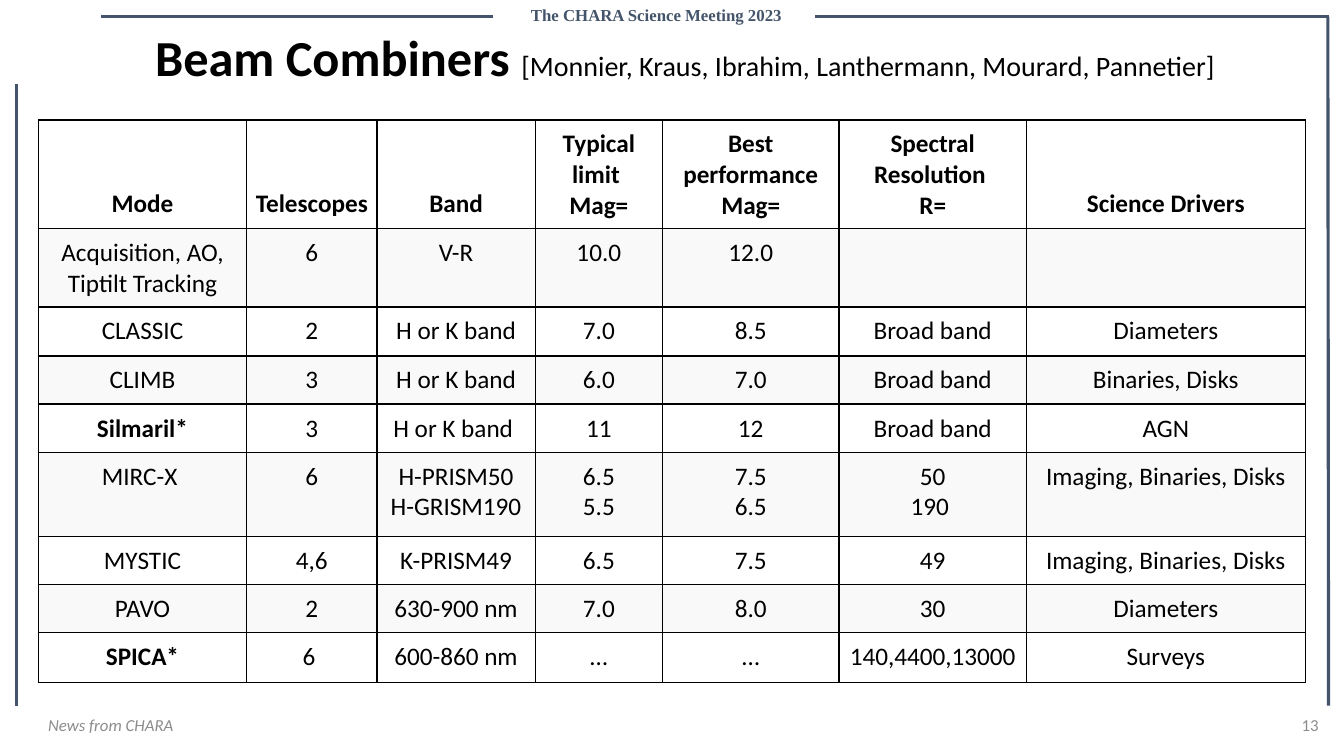
"""Build the beam combiner overview slide as out.pptx."""
from dataclasses import dataclass

from lxml.etree import SubElement
from pptx import Presentation
from pptx.dml.color import RGBColor
from pptx.enum.shapes import MSO_CONNECTOR
from pptx.enum.text import MSO_ANCHOR, PP_ALIGN
from pptx.oxml import parse_xml
from pptx.oxml.ns import nsdecls, qn
from pptx.util import Pt


@dataclass(frozen=True)
class Theme:
    ink: str = "000000"
    slate: str = "44546A"
    grey: str = "8C8C8C"
    band: str = "F9F9F9"
    white: str = "FFFFFF"
    body_font: str = "Calibri"
    meeting_font: str = "Times New Roman"
    title_size: int = 36
    authors_size: int = 20
    table_size: int = 18
    small_size: int = 12
    rule_width: float = 2.25
    border_width: float = 1


THEME = Theme()

MEETING = "The CHARA Science Meeting 2023"
TITLE = "Beam Combiners "
AUTHORS = "[Monnier, Kraus, Ibrahim, Lanthermann, Mourard, Pannetier]"
FOOTER = "News from CHARA"
PAGE = "13"

HEADINGS = ("Mode", "Telescopes", "Band", "Typical limit \vMag=",
            "Best performance Mag=", "Spectral Resolution \vR=", "Science Drivers")
COMBINERS = [
    ("Acquisition, AO, Tiptilt Tracking", "6", "V-R", "10.0", "12.0", "", ""),
    ("CLASSIC", "2", "H or K band", "7.0", "8.5", "Broad band", "Diameters"),
    ("CLIMB", "3", "H or K band", "6.0", "7.0", "Broad band", "Binaries, Disks"),
    ("Silmaril*", "3", "H or K band ", "11", "12", "Broad band", "AGN"),
    ("MIRC-X ", "6", "H-PRISM50\nH-GRISM190", "6.5\n5.5", "7.5\n6.5", "50\n190 ",
     "Imaging, Binaries, Disks"),
    ("MYSTIC", "4,6", "K-PRISM49", "6.5", "7.5", "49", "Imaging, Binaries, Disks"),
    ("PAVO", "2", "630-900 nm", "7.0", "8.0", "30", "Diameters"),
    ("SPICA*", "6 ", "600-860 nm", "…", "…", "140,4400,13000", "Surveys"),
]

SLIDE_SIZE = (960, 540)
TABLE_ORIGIN = (27.3, 85.7)
COLUMN_WIDTHS = (149, 93, 113, 91, 126, 134, 199)
ROW_HEIGHTS = (71.5, 53.5, 35, 32.5, 33, 60, 32.5, 33, 36)
CELL_INSET = 6.4
FRAME_RULES = [
    ((12, 60), (12, 504)),
    ((582.5, 12), (949, 12)),
    ((948.5, 12), (949, 504)),
    ((72, 12), (352, 12)),
]


def style_font(font, size=None, color=THEME.ink, name=THEME.body_font, bold=None, italic=None):
    font.name = name
    font.color.rgb = RGBColor.from_string(color)
    font.bold = bold
    font.italic = italic
    if size:
        font.size = Pt(size)


def add_label(slide, box, text, align=PP_ALIGN.LEFT, anchor=MSO_ANCHOR.TOP, wrap=True, **font):
    frame = slide.shapes.add_textbox(*map(Pt, box)).text_frame
    frame.word_wrap = wrap
    frame.vertical_anchor = anchor
    paragraph = frame.paragraphs[0]
    paragraph.text = text
    paragraph.alignment = align
    style_font(paragraph.font, **font)
    return paragraph


def add_rule(slide, start, end):
    rule = slide.shapes.add_connector(MSO_CONNECTOR.STRAIGHT, *map(Pt, start + end))
    rule.line.color.rgb = RGBColor.from_string(THEME.slate)
    rule.line.width = Pt(THEME.rule_width)
    SubElement(rule._element.spPr, qn("a:effectLst"))


def add_borders(cell):
    properties = cell._tc.get_or_add_tcPr()
    for position, side in enumerate(("lnL", "lnR", "lnT", "lnB")):
        properties.insert(position, parse_xml(
            f'<a:{side} {nsdecls("a")} w="{Pt(THEME.border_width)}"><a:solidFill>'
            f'<a:srgbClr val="{THEME.ink}"/></a:solidFill></a:{side}>'))


def fill_cell(cell, text, heading, bold, color):
    cell.text = text
    cell.vertical_anchor = MSO_ANCHOR.BOTTOM if heading else MSO_ANCHOR.TOP
    cell.margin_left = cell.margin_right = Pt(CELL_INSET)
    cell.margin_top = cell.margin_bottom = Pt(CELL_INSET)
    for paragraph in cell.text_frame.paragraphs:
        paragraph.alignment = PP_ALIGN.CENTER
        style_font(paragraph.font, THEME.table_size, bold=bold)
    cell.fill.solid()
    cell.fill.fore_color.rgb = RGBColor.from_string(color)
    add_borders(cell)


def add_combiner_table(slide):
    rows = [HEADINGS, *COMBINERS]
    extent = (*TABLE_ORIGIN, sum(COLUMN_WIDTHS), sum(ROW_HEIGHTS))
    table = slide.shapes.add_table(len(rows), len(HEADINGS), *map(Pt, extent)).table
    table.first_row = table.horz_banding = False
    for column, width in zip(table.columns, COLUMN_WIDTHS):
        column.width = Pt(width)
    for row, height in zip(table.rows, ROW_HEIGHTS):
        row.height = Pt(height)
    for r, values in enumerate(rows):
        color = THEME.band if r % 2 else THEME.white
        for c, text in enumerate(values):
            bold = r == 0 or text.endswith("*")
            fill_cell(table.cell(r, c), text, r == 0, bold, color)


def add_title(slide):
    title = add_label(slide, (103.7, 20.2, 828, 45.4), "")
    title.line_spacing = 0.9
    for text, size, bold in ((TITLE, THEME.title_size, True),
                             (AUTHORS, THEME.authors_size, False)):
        run = title.add_run()
        run.text = text
        run.font.size = Pt(size)
        run.font.bold = bold


def main():
    deck = Presentation()
    deck.slide_width, deck.slide_height = map(Pt, SLIDE_SIZE)
    slide = deck.slides.add_slide(deck.slide_layouts[6])
    add_label(slide, (372.2, 0, 195.8, 21.6), MEETING, wrap=False, size=THEME.small_size,
              color=THEME.slate, name=THEME.meeting_font, bold=True)
    for start, end in FRAME_RULES:
        add_rule(slide, start, end)
    add_title(slide)
    add_combiner_table(slide)
    add_label(slide, (915, 503.3, 34, 28.8), PAGE, PP_ALIGN.RIGHT, MSO_ANCHOR.MIDDLE,
              size=THEME.small_size, color=THEME.grey)
    add_label(slide, (7.2, 503.3, 144, 28.8), FOOTER, PP_ALIGN.CENTER, MSO_ANCHOR.MIDDLE,
              size=THEME.small_size, color=THEME.grey, italic=True)
    deck.save("out.pptx")


if __name__ == "__main__":
    main()
